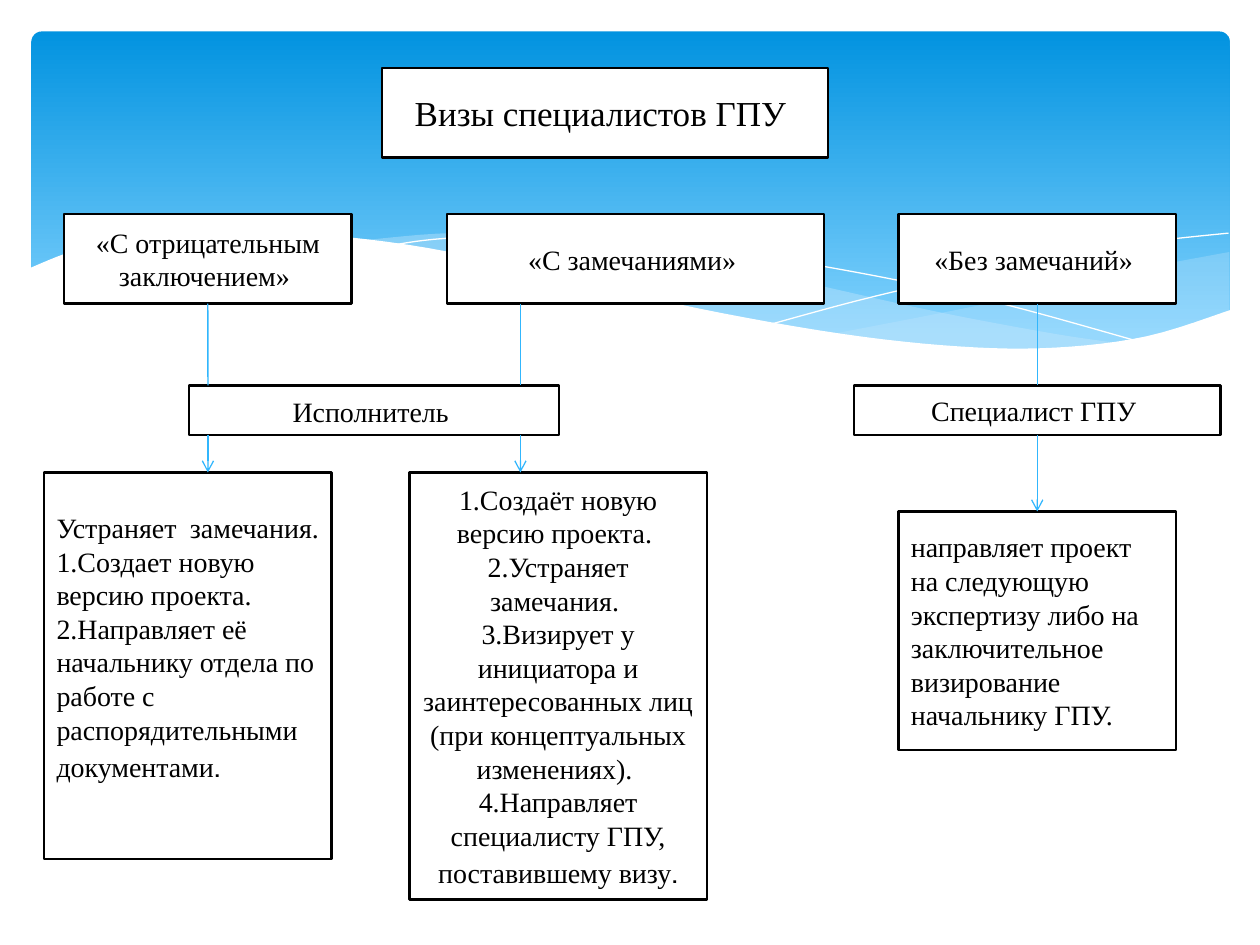
from lxml import etree
from pptx import Presentation
from pptx.dml.color import RGBColor
from pptx.enum.shapes import MSO_CONNECTOR, MSO_SHAPE
from pptx.enum.text import MSO_ANCHOR, PP_ALIGN
from pptx.oxml.ns import qn
from pptx.util import Pt

RECTANGLE, ROUNDED = MSO_SHAPE.RECTANGLE, MSO_SHAPE.ROUNDED_RECTANGLE
STRAIGHT = MSO_CONNECTOR.STRAIGHT
MIDDLE = MSO_ANCHOR.MIDDLE
CENTER, LEFT, JUSTIFY = PP_ALIGN.CENTER, PP_ALIGN.LEFT, PP_ALIGN.JUSTIFY
TOP, BOTTOM = 0, 2


def color(value):
    return RGBColor.from_string(value)


def curve(anchors, steps=6):
    padded = [anchors[0], *anchors, anchors[-1]]
    points = [anchors[0]]
    for before, start, end, after in zip(padded, padded[1:], padded[2:], padded[3:]):
        for step in range(1, steps + 1):
            t = step / steps
            points.append(tuple(
                0.5 * (2 * b + (c - a) * t + (2 * a - 5 * b + 4 * c - d) * t ** 2
                       + (3 * b - a - 3 * c + d) * t ** 3)
                for a, b, c, d in zip(before, start, end, after)))
    return points


class FlowSlide:
    """Holds the style and the current slide, and draws each kind of element."""

    font, tail_font = "Times New Roman", "Cabin"
    ink, paper, accent = "000000", "FFFFFF", "31B6FD"
    size, tail_size = 16, 18

    def __init__(self, deck):
        self.page = deck.slides.add_slide(deck.slide_layouts[6])

    def backdrop(self, left, top, width, height, stops):
        panel = self.page.shapes.add_shape(ROUNDED, Pt(left), Pt(top), Pt(width), Pt(height))
        panel.adjustments[0] = 0.03
        panel.shadow.inherit = False
        panel.line.fill.background()
        panel.fill.gradient()
        panel.fill.gradient_angle = 270
        for stop, (position, shade) in zip(panel.fill.gradient_stops, stops):
            stop.position = position
            stop.color.rgb = color(shade)

    def outline(self, points, closed):
        scaled = [(Pt(x), Pt(y)) for x, y in points]
        builder = self.page.shapes.build_freeform(*scaled[0])
        builder.add_line_segments(scaled[1:], close=closed)
        shape = builder.convert_to_shape()
        shape.shadow.inherit = False
        return shape

    def wave(self, points, fill, opacity=100):
        shape = self.outline(points, True)
        shape.line.fill.background()
        shape.fill.solid()
        shape.fill.fore_color.rgb = color(fill)
        if opacity < 100:
            shade = shape._element.spPr.find(".//" + qn("a:srgbClr"))
            etree.SubElement(shade, qn("a:alpha"), val=str(opacity * 1000))

    def strand(self, points):
        shape = self.outline(points, False)
        shape.fill.background()
        shape.line.color.rgb = color(self.paper)
        shape.line.width = Pt(0)

    def box(self, left, top, width, height, *lines, size=None, align=CENTER,
            first_align=None, tail="", bottom_inset=3.6):
        box = self.page.shapes.add_shape(RECTANGLE, Pt(left), Pt(top), Pt(width), Pt(height))
        box.shadow.inherit = False
        box.fill.solid()
        box.fill.fore_color.rgb = color(self.paper)
        box.line.color.rgb = color(self.ink)
        box.line.width = Pt(1.25)
        frame = box.text_frame
        frame.word_wrap = True
        frame.vertical_anchor = MIDDLE
        frame.margin_bottom = Pt(bottom_inset)
        for index, line in enumerate(lines):
            para = frame.add_paragraph() if index else frame.paragraphs[0]
            para.alignment = align if index else first_align or align
            spans = [(line, self.font, size or self.size)]
            if tail and index == len(lines) - 1:
                spans.append((tail, self.tail_font, self.tail_size))
            for text, font, points in spans:
                span = para.add_run()
                span.text = text
                target = span.font if len(spans) > 1 else para.font
                target.name, target.size = font, Pt(points)
                target.color.rgb = color(self.ink)
        return box

    def link(self, x, start, end, source=None, target=None, arrow=False):
        link = self.page.shapes.add_connector(STRAIGHT, Pt(x), Pt(start), Pt(x), Pt(end))
        if source is not None:
            link.begin_connect(source, BOTTOM)
        if target is not None:
            link.end_connect(target, TOP)
        link.line.color.rgb = color(self.accent)
        link.line.width = Pt(0.75)
        if arrow:
            etree.SubElement(link.line._get_or_add_ln(), qn("a:tailEnd"), type="arrow")
        etree.SubElement(link._element.spPr, qn("a:effectLst"))


def draw_background(slide):
    slide.backdrop(18, 18, 684.7, 194.4, [(0, "0293E0"), (0.9, "83D3FE")])
    right_top = [(702.5, 144), (652.3, 153.4), (619.9, 160.6), (560.9, 174.2), (475.9, 190.8)]
    right_bottom = [(475.9, 190.8), (527, 197.3), (578.2, 200.2), (621.4, 198),
                    (662.4, 190.8), (702.5, 177.8)]
    slide.wave(curve(right_top) + curve(right_bottom), "C6E7FC", 29)
    middle_top = [(643, 196.6), (602.6, 190.8), (533.5, 177.8), (452.9, 159.8),
                  (389.5, 146.2), (318.2, 136.1), (259.9, 133.2), (205.9, 137.5)]
    middle_bottom = [(205.9, 137.5), (260.6, 146.2), (323.3, 159.8), (407.5, 178.6),
                     (489.6, 193), (565.2, 200.2), (617, 199.4), (643, 196.6)]
    slide.wave(curve(middle_top) + curve(middle_bottom), "C6E7FC", 40)
    slide.strand(curve([(222.5, 140.4), (247.7, 136.8), (288.7, 134.6), (352.1, 136.8),
                        (419, 144), (500.4, 157.7), (572.4, 173.5), (653, 195.8)]))
    slide.strand(curve([(441.4, 185), (500.4, 169.2), (580.3, 151.2), (644.4, 139.7),
                        (702, 133.2)]))
    front = [(703.4, 177.1), (655.2, 192.2), (602.6, 198.7), (548, 198), (481, 190.8),
             (399.6, 176.4), (321.8, 158.4), (244.8, 141.8), (180, 133.9), (127.4, 132.5),
             (76.3, 136.1), (42.5, 143.3), (16.6, 153.4)]
    slide.wave(curve(front) + [(16.6, 236.9), (703.4, 236.9)], "FFFFFF")


def draw_flow(slide):
    visa_top, visa_height = 122.4, 51.1
    role_top, role_height = 220.3, 28.1
    action_top, last_top = 270, 292.3
    visa_bottom, role_bottom = visa_top + visa_height, role_top + role_height
    negative_x, remarks_x, clear_x = 118.8, 297.4, 592.7

    slide.box(218.2, 38.9, 254.9, 51.1, "Визы специалистов ГПУ ", size=20)
    negative = slide.box(36.7, visa_top, 164.2, visa_height, "«С отрицательным заключением» ")
    slide.box(255.6, visa_top, 215.3, visa_height, "«С замечаниями» ")
    slide.box(108, role_top, 211.7, role_height, "Исполнитель", tail=" ")
    specialist = slide.box(488, role_top, 209.4, role_height, "Специалист ГПУ ")
    clear = slide.box(513.5, visa_top, 158.4, visa_height, "«Без замечаний» ")
    slide.box(25.2, action_top, 164.2, 221,
              "Устраняет замечания. ",
              "1.Создает новую версию проекта.",
              "2.Направляет её начальнику отдела по работе с распорядительными документами",
              align=LEFT, first_align=JUSTIFY, tail=".", bottom_inset=25)
    slide.box(234, action_top, 169.9, 244,
              "1.Создаёт новую версию проекта. ",
              "2.Устраняет замечания. ",
              "3.Визирует у инициатора и заинтересованных лиц (при концептуальных изменениях). ",
              "4.Направляет специалисту ГПУ, поставившему визу", tail=".")
    review = slide.box(513.5, last_top, 158.4, 136.1,
                       "направляет проект на следующую экспертизу либо на "
                       "заключительное визирование начальнику ГПУ.", align=LEFT)

    slide.link(negative_x, visa_bottom, role_top, source=negative)
    slide.link(remarks_x, visa_bottom, role_top)
    for x in (negative_x, remarks_x):
        slide.link(x, role_bottom, action_top, arrow=True)
    slide.link(clear_x, visa_bottom, role_top, clear, specialist)
    slide.link(clear_x, role_bottom, last_top, specialist, review, arrow=True)


def main():
    deck = Presentation()
    deck.slide_width, deck.slide_height = Pt(720), Pt(540)
    slide = FlowSlide(deck)
    draw_background(slide)
    draw_flow(slide)
    deck.save("out.pptx")


if __name__ == "__main__":
    main()
